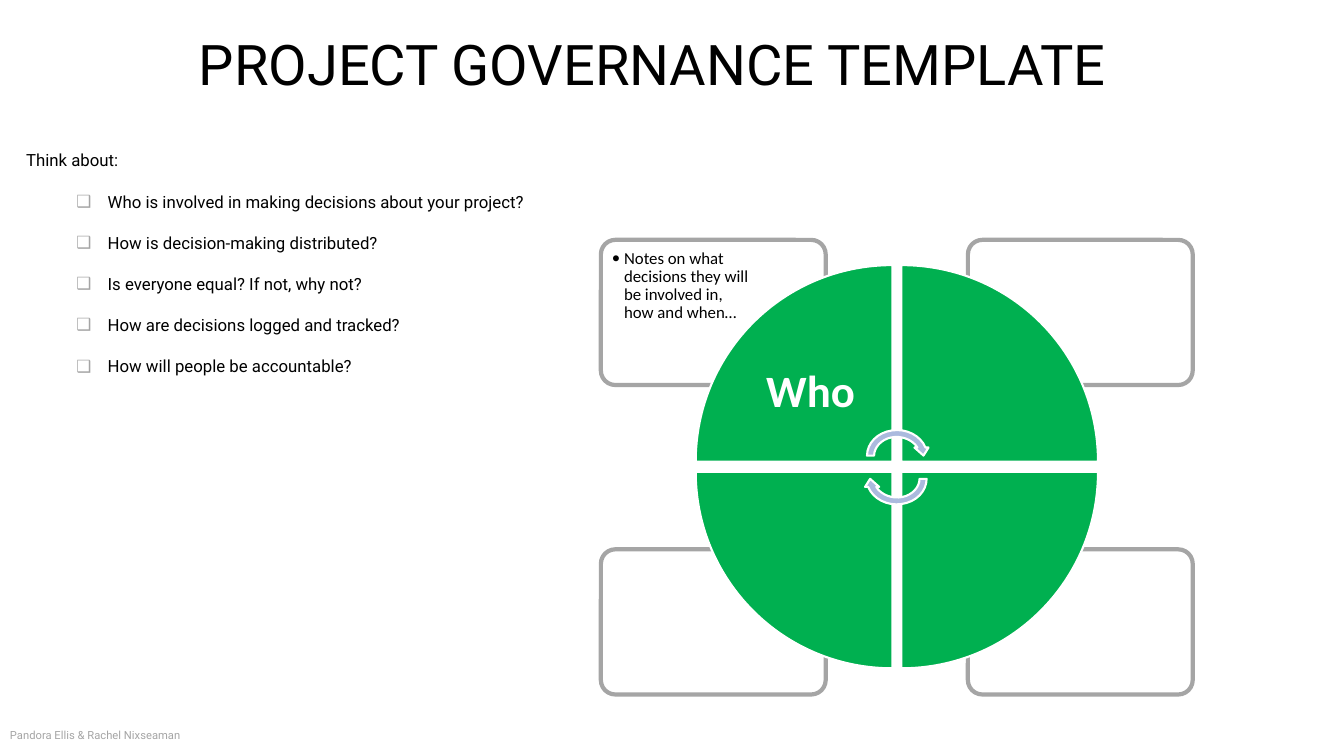
from dataclasses import dataclass

from lxml.etree import SubElement
from pptx import Presentation
from pptx.dml.color import RGBColor
from pptx.enum.shapes import MSO_SHAPE
from pptx.enum.text import MSO_ANCHOR, PP_ALIGN
from pptx.oxml.ns import qn
from pptx.util import Inches, Pt

ROUND = MSO_SHAPE.ROUNDED_RECTANGLE
TOP, MID = MSO_ANCHOR.TOP, MSO_ANCHOR.MIDDLE
LEFT, CENTER = PP_ALIGN.LEFT, PP_ALIGN.CENTER

COLORS = {
    "black": "000000",
    "white": "FFFFFF",
    "gray": "A5A5A5",
    "green": "00B050",
    "blue": "ABBADE",
}

Points = list[tuple[float, float]]


@dataclass(frozen=True)
class Bullet:
    char: str
    color: str
    margin: float
    hang: float


@dataclass(frozen=True)
class Line:
    text: str
    size: float
    font: str = "Roboto"
    color: str = "black"
    bold: bool = False
    align: PP_ALIGN = LEFT
    space: float = 1.0
    before: float = 0
    bullet: Bullet | None = None


@dataclass(frozen=True)
class Box:
    left: float
    top: float
    width: float
    height: float
    lines: list[Line]
    side: float = 0.1
    edge: float = 0.05
    anchor: MSO_ANCHOR = TOP


@dataclass(frozen=True)
class Form:
    width: float
    height: float
    color: str
    steps: list[Points]


WEDGE = Form(1.95, 1.95, "green", [
    [(0, 1.95)],
    [(0, 0.87), (0.87, 0), (1.95, 0)],
    [(1.95, 1.95)],
])
ARROW = Form(0.67, 0.59, "blue", [
    [(0.04, 0.29)],
    [(0.04, 0.17), (0.14, 0.06), (0.29, 0.04)],
    [(0.43, 0.02), (0.57, 0.09), (0.62, 0.21)],
    [(0.65, 0.21)],
    [(0.6, 0.29)],
    [(0.51, 0.21)],
    [(0.54, 0.21)],
    [(0.49, 0.13), (0.38, 0.09), (0.28, 0.11)],
    [(0.18, 0.13), (0.11, 0.21), (0.11, 0.29)],
])


def shade(name: str) -> RGBColor:
    return RGBColor.from_string(COLORS[name])


def add_bullet(para, mark: Bullet, font: str) -> None:
    props = para._p.get_or_add_pPr()
    props.set("marL", str(Inches(mark.margin)))
    props.set("indent", str(-Inches(mark.hang)))
    tint = SubElement(props, qn("a:buClr"))
    SubElement(tint, qn("a:srgbClr")).set("val", COLORS[mark.color])
    SubElement(props, qn("a:buFont")).set("typeface", font)
    SubElement(props, qn("a:buChar")).set("char", mark.char)


def add_box(slide, box: Box) -> None:
    shape = slide.shapes.add_textbox(
        Inches(box.left), Inches(box.top), Inches(box.width), Inches(box.height))
    frame = shape.text_frame
    frame.word_wrap = True
    frame.vertical_anchor = box.anchor
    frame.margin_left = frame.margin_right = Inches(box.side)
    frame.margin_top = frame.margin_bottom = Inches(box.edge)
    for i, line in enumerate(box.lines):
        para = frame.add_paragraph() if i else frame.paragraphs[0]
        para.alignment = line.align
        para.line_spacing = line.space
        para.space_before = Pt(line.before)
        if line.bullet:
            para.level = 1
            add_bullet(para, line.bullet, line.font)
        run = para.add_run()
        run.text = line.text
        run.font.name = line.font
        run.font.size = Pt(line.size)
        run.font.bold = line.bold
        run.font.color.rgb = shade(line.color)


def paint(shape, fill: str, edge: str, width: float) -> None:
    shape.shadow.inherit = False
    shape.fill.solid()
    shape.fill.fore_color.rgb = shade(fill)
    shape.line.color.rgb = shade(edge)
    shape.line.width = Pt(width)


def add_form(slide, form: Form, left: float, top: float, turn: int) -> None:
    frame = slide.shapes.build_freeform(Inches(left), Inches(top))
    frame.add_line_segments(
        [(Inches(left + form.width), Inches(top + form.height))], close=True)
    shape = frame.convert_to_shape()
    trace = shape._element.find(".//" + qn("a:path"))
    trace[:] = []
    for i, step in enumerate(form.steps):
        kind = "a:cubicBezTo" if len(step) == 3 else "a:lnTo" if i else "a:moveTo"
        node = SubElement(trace, qn(kind))
        for x, y in step:
            spot = SubElement(node, qn("a:pt"))
            spot.set("x", str(Inches(x)))
            spot.set("y", str(Inches(y)))
    SubElement(trace, qn("a:close"))
    shape.rotation = turn
    paint(shape, form.color, "white", 1.5)


def main() -> None:
    deck = Presentation()
    deck.slide_width, deck.slide_height = Inches(13.33), Inches(7.5)
    slide = deck.slides.add_slide(deck.slide_layouts[6])

    check = Bullet("❑", "gray", 0.81, 0.31)
    dot = Bullet("•", "black", 0.12, 0.12)
    asks = [
        "Who is involved in making decisions about your project?",
        "How is decision-making distributed?",
        "Is everyone equal? If not, why not?",
        "How are decisions logged and tracked?",
        "How will people be accountable?",
    ]
    title = Line("PROJECT GOVERNANCE TEMPLATE", 40, align=CENTER, space=0.9)
    prompts = [Line("Think about:", 12, space=1.7)]
    prompts += [Line(ask, 12, space=1.7, before=5, bullet=check) for ask in asks]
    note = Line("Notes on what decisions they will be involved in, how and when…",
                12, "Calibri", space=0.9, bullet=dot)
    who = Line("Who", 32, "Calibri", "white", True, CENTER, 0.9)
    credit = Line("Pandora Ellis & Rachel Nixseaman", 8, color="gray")

    add_box(slide, Box(1.47, 0.32, 10, 0.8, [title]))
    add_box(slide, Box(0.16, 1.3, 5.32, 3.74, prompts))

    for top in (5.45, 2.38):
        for left in (9.6, 5.96):
            card = slide.shapes.add_shape(
                ROUND, Inches(left), Inches(top), Inches(2.23), Inches(1.44))
            card.adjustments[0] = 0.1
            paint(card, "white", "gray", 3)
    add_box(slide, Box(6, 2.41, 1.5, 1.02, [note], 0.07, 0.07))

    spots = [(6.9, 2.63), (8.94, 2.63), (8.94, 4.68), (6.9, 4.68)]
    for i, (left, top) in enumerate(spots):
        add_form(slide, WEDGE, left, top, 90 * i)
    add_box(slide, Box(7.23, 3.21, 1.62, 1.38, [who], 0.25, 0.25, MID))

    for i, top in enumerate((4.23, 4.45)):
        add_form(slide, ARROW, 8.56, top, 180 * i)
    add_box(slide, Box(0, 7.16, 3.98, 0.34, [credit], 0.1, 0.1))

    deck.save("out.pptx")


if __name__ == "__main__":
    main()
